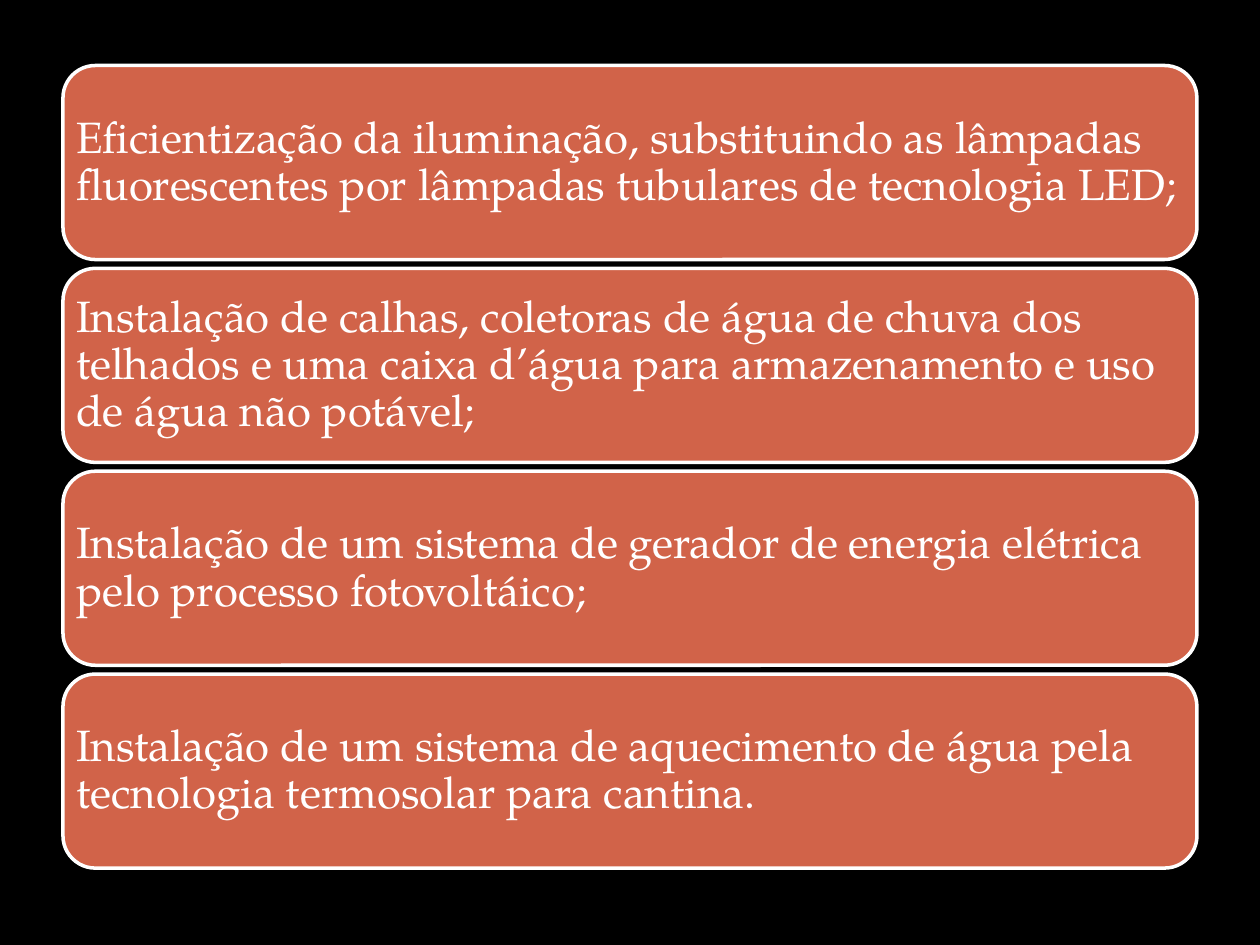
from pptx import Presentation
from pptx.dml.color import RGBColor
from pptx.enum.shapes import MSO_SHAPE as Shape
from pptx.enum.text import MSO_ANCHOR as Anchor, PP_ALIGN as Align
from pptx.util import Inches, Pt

COLORS = {"back": "000000", "card": "D16349", "white": "FFFFFF"}
FONT = "TeX Gyre Pagella"

ACTIONS = [
    "Eficientização da iluminação, substituindo as lâmpadas fluorescentes "
    "por lâmpadas tubulares de tecnologia LED;",
    "Instalação de calhas, coletoras de água de chuva dos telhados e uma "
    "caixa d’água para armazenamento e uso de água não potável;",
    "Instalação de um sistema de gerador de energia elétrica pelo processo "
    "fotovoltáico;",
    "Instalação de um sistema de aquecimento de água pela tecnologia "
    "termosolar para cantina.",
]

# Card stack, in inches
LEFT, TOP, WIDTH, HEIGHT = 0.5, 0.52, 9, 1.54
STEP = 1.61
INSET = 0.03  # added to the inset that the round corners give


def color(name):
    return RGBColor.from_string(COLORS[name])


def paint(fill, name):
    fill.solid()
    fill.fore_color.rgb = color(name)


def add_card(slide, top, text):
    card = slide.shapes.add_shape(
        Shape.ROUNDED_RECTANGLE,
        Inches(LEFT), Inches(top), Inches(WIDTH), Inches(HEIGHT))
    card.shadow.inherit = False
    paint(card.fill, "card")
    card.line.color.rgb = color("white")
    card.line.width = Pt(2)

    # Text
    frame = card.text_frame
    frame.word_wrap = True
    frame.vertical_anchor = Anchor.MIDDLE
    frame.margin_left = frame.margin_right = Inches(INSET)
    frame.margin_top = frame.margin_bottom = Inches(INSET)
    frame.text = text
    para = frame.paragraphs[0]
    para.alignment = Align.LEFT
    para.line_spacing = 0.9
    font = para.runs[0].font
    font.name = FONT
    font.size = Pt(25)
    font.color.rgb = color("white")


def main():
    deck = Presentation()
    deck.slide_width, deck.slide_height = Inches(10), Inches(7.5)
    slide = deck.slides.add_slide(deck.slide_layouts[6])
    paint(slide.background.fill, "back")

    # One card per action
    for row, text in enumerate(ACTIONS):
        add_card(slide, TOP + row * STEP, text)

    deck.save("out.pptx")


if __name__ == "__main__":
    main()
